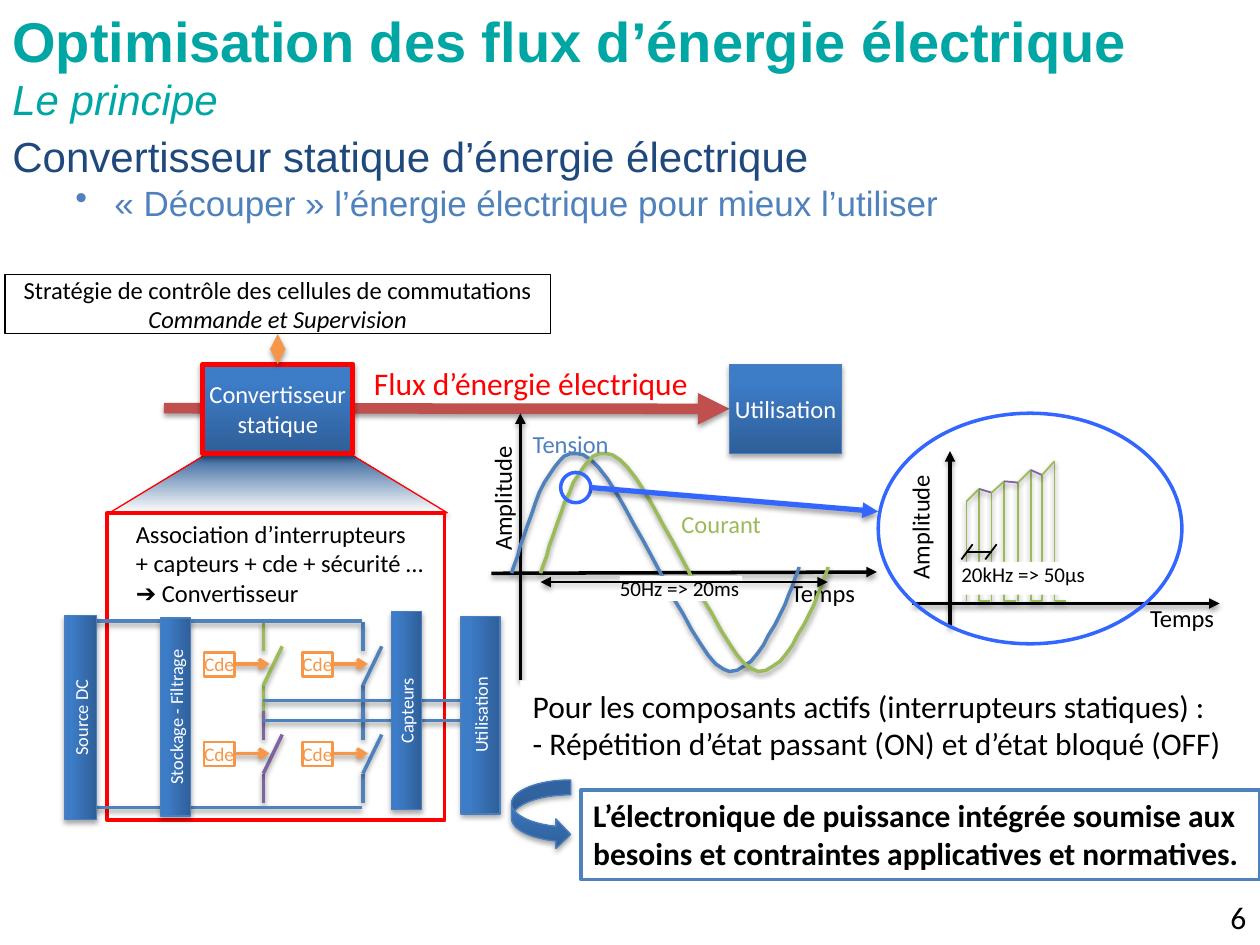
import pptx
import pptx.dml.color
import pptx.enum.shapes
import pptx.enum.text
import pptx.oxml
import pptx.oxml.ns
import pptx.util

RGB = pptx.dml.color.RGBColor
KIND = pptx.enum.shapes.MSO_SHAPE
ALIGN = pptx.enum.text.PP_ALIGN
ANCHOR = pptx.enum.text.MSO_ANCHOR

PX = 9144  # one px is a hundredth of an inch
BLACK = RGB(0x00, 0x00, 0x00)
WHITE = RGB(0xFF, 0xFF, 0xFF)
RED = RGB(0xFF, 0x00, 0x00)
BRICK = RGB(0xC0, 0x50, 0x4D)
TEAL = RGB(0x00, 0xA6, 0xA4)
NAVY = RGB(0x1F, 0x49, 0x7D)
BLUE = RGB(0x4F, 0x81, 0xBD)
EDGE = RGB(0x4B, 0x7E, 0xBC)
VIVID = RGB(0x33, 0x66, 0xFF)
GREEN = RGB(0x9B, 0xBB, 0x59)
PURPLE = RGB(0x80, 0x64, 0xA2)
ORANGE = RGB(0xF7, 0x96, 0x46)
DEEP = RGB(0x2F, 0x5F, 0x99)
LIGHT = RGB(0x3D, 0x7C, 0xC7)
STEEL = ((0, DEEP), (0.8, LIGHT))
FADE = ((0, WHITE), (1, DEEP))


def node(tag, **attrs):
    item = pptx.oxml.parse_xml(f"<a:{tag} {pptx.oxml.ns.nsdecls('a')}/>")
    for key, val in attrs.items():
        item.set(key, str(val))
    return item


def shade(item, alpha):
    """Give a shape or connector a soft shadow straight below it."""
    glow = node("outerShdw", blurRad=39400, dist=22000, dir=5400000, rotWithShape=0)
    color = node("srgbClr", val="000000")
    color.append(node("alpha", val=alpha * 1000))
    glow.append(color)
    effects = node("effectLst")
    effects.append(glow)
    item._element.spPr.append(effects)


def curve(start, *parts):
    """Sample a chain of cubic Bezier curves."""
    pts, steps = [start], 16
    for b, c, d in parts:
        a = pts[-1]
        for i in range(1, steps + 1):
            t = i / steps
            s = 1 - t
            pts.append(tuple(s**3 * p + 3 * s * s * t * q + 3 * s * t * t * r + t**3 * u
                             for p, q, r, u in zip(a, b, c, d)))
    return pts


class Board:
    def __init__(self, deck, font):
        self.font = font
        self.slide = deck.slides.add_slide(deck.slide_layouts[6])
        self.shapes = self.slide.shapes

    def put(self, shape, words, size, color=BLACK, align=ALIGN.LEFT,
            anchor=ANCHOR.TOP, pad=(10, 5), wrap=True):
        """Set the text of a shape and return its frame."""
        frame = shape.text_frame
        frame.text = words
        frame.word_wrap = wrap
        frame.vertical_anchor = anchor
        frame.margin_left = frame.margin_right = pad[0] * PX
        frame.margin_top = frame.margin_bottom = pad[1] * PX
        for para in frame.paragraphs:
            para.alignment = align
            for run in para.runs:
                run.font.name = self.font
                run.font.size = pptx.util.Pt(size)
                run.font.color.rgb = color
        return frame

    def label(self, x, y, w, h, words, size, color=BLACK, turn=0, **style):
        box = self.shapes.add_textbox(x * PX, y * PX, w * PX, h * PX)
        box.rotation = turn
        return self.put(box, words, size, color, **style)

    def shape(self, x, y, w, h, kind=KIND.RECTANGLE, fill=None, line=None, wide=0.75, turn=0):
        """Draw a preset shape; a tuple as fill means gradient stops."""
        item = self.shapes.add_shape(kind, x * PX, y * PX, w * PX, h * PX)
        item.rotation = turn
        if isinstance(fill, tuple) and not isinstance(fill, RGB):
            item.fill.gradient()
            item.fill.gradient_angle = 90
            for stop, (place, color) in zip(item.fill.gradient_stops, fill):
                stop.position = place
                stop.color.rgb = color
        elif fill is not None:
            item.fill.solid()
            item.fill.fore_color.rgb = fill
        else:
            item.fill.background()
        if line is not None:
            item.line.color.rgb = line
            item.line.width = pptx.util.Pt(wide)
        else:
            item.line.fill.background()
        if fill in (STEEL, FADE):
            shade(item, 35)
        else:
            item.shadow.inherit = False
        return item

    def block(self, x, y, w, h, words, size=14, line=EDGE, wide=0.75, turn=0, pad=(4, 5)):
        item = self.shape(x, y, w, h, fill=STEEL, line=line, wide=wide, turn=turn)
        self.put(item, words, size, WHITE, ALIGN.CENTER, ANCHOR.MIDDLE, pad)
        return item

    def line(self, x1, y1, x2, y2, color, wide=2, head=None, tail=None):
        item = self.shapes.add_connector(pptx.enum.shapes.MSO_CONNECTOR.STRAIGHT,
                                         x1 * PX, y1 * PX, x2 * PX, y2 * PX)
        item.line.color.rgb = color
        item.line.width = pptx.util.Pt(wide)
        for tag, end in (("headEnd", head), ("tailEnd", tail)):
            if end:
                item.line._get_or_add_ln().append(node(tag, type=end))
        shade(item, 38)
        return item

    def trace(self, pts, color, wide=2):
        pen = self.shapes.build_freeform(*pts[0], scale=PX)
        pen.add_line_segments(pts[1:], close=False)
        item = pen.convert_to_shape()
        item.fill.background()
        item.line.color.rgb = color
        item.line.width = pptx.util.Pt(wide)
        shade(item, 38)

    def switch(self, x, y, color):
        self.line(x, y, x, y + 23, color)
        self.line(x, y + 50, x, y + 73, color)
        self.line(x + 15, y + 19, x, y + 50, color)

    def order(self, x, y):
        """Draw a switch command box with its arrow."""
        self.line(x + 13, y + 9, x + 52, y + 9, ORANGE, tail="arrow")
        box = self.shape(x, y, 24, 19, fill=WHITE, line=ORANGE, wide=1.5)
        self.put(box, "Cde", 11, ORANGE, pad=(0, 0), wrap=False)


def heading(board):
    board.font = "Arial"
    title = board.label(0, 0, 1000, 79, "Optimisation des flux d’énergie électrique\vLe principe",
                        32, TEAL)
    main, sub = title.paragraphs[0].runs
    main.font.bold = True
    sub.font.italic = True
    sub.font.size = pptx.util.Pt(24)
    body = board.label(0, 99, 1000, 118, "Convertisseur statique d’énergie électrique\n"
                       "« Découper » l’énergie électrique pour mieux l’utiliser", 24, NAVY)
    point = body.paragraphs[1]
    point.level = 1
    props = point._p.get_or_add_pPr()
    props.set("marL", str(81 * PX))
    props.set("indent", str(-31 * PX))
    props.append(node("buChar", char="•"))
    font = point.runs[0].font
    font.size, font.color.rgb = pptx.util.Pt(20), BLUE
    board.font = "Calibri"


def chain(board):
    cone = board.shape(87, 360, 268, 47, KIND.TRAPEZOID, FADE, RED)
    cone.adjustments[0] = 1.65
    flux = board.line(130, 324, 579, 324, BRICK, 6, tail="triangle")
    conv = board.block(161, 289, 119, 71, "Convertisseur\nstatique", line=RED, wide=3, pad=(4, 12))
    load = board.block(579, 289, 89, 71, "Utilisation", pad=(4, 12))
    flux.end_connect(load, 1)
    board.label(287, 284, 274, 40, "Flux d’énergie électrique", 18, RED, wrap=False)
    plan = board.shape(4, 218, 433, 47, line=BLACK)
    text = board.put(plan, "Stratégie de contrôle des cellules de commutations\n"
                     "Commande et Supervision", 14, align=ALIGN.CENTER,
                     anchor=ANCHOR.MIDDLE, pad=(0, 0))
    text.paragraphs[1].runs[0].font.italic = True
    link = board.line(221, 289, 221, 265, ORANGE, 3, "triangle", "triangle")
    link.begin_connect(conv, 0)
    link.end_connect(plan, 2)


def waves(board):
    board.line(413, 540, 413, 328, BLACK, tail="triangle")
    board.line(390, 455, 696, 454, BLACK, tail="triangle")
    board.label(618, 454, 73, 34, "Temps", 14, wrap=False)
    board.label(347, 378, 104, 34, "Amplitude", 14, turn=270, wrap=False)
    wave = curve((406, 455), ((418, 423), (435, 348), (463, 361)),
                 ((492, 373), (546, 516), (574, 531)), ((603, 546), (634, 450), (634, 450)))
    for shift, color in ((0, BLUE), (23, GREEN)):
        board.trace([(x + shift, y) for x, y in wave], color)
    board.label(413, 336, 83, 34, "Tension", 14, BLUE, wrap=False)
    board.label(531, 399, 84, 34, "Courant", 14, GREEN, wrap=False)
    board.shape(445, 375, 24, 24, KIND.OVAL, line=VIVID, wide=2)
    board.line(697, 406, 469, 387, VIVID, 3, head="triangle")
    span = board.shape(492, 457, 97, 20, fill=WHITE)
    board.put(span, "50Hz => 20ms", 12, pad=(0, 0), wrap=False)
    board.line(429, 462, 657, 462, BLACK, 1, "triangle", "triangle")


def zoom(board):
    board.line(754, 498, 754, 358, BLACK, tail="triangle")
    board.line(724, 479, 968, 479, BLACK, tail="triangle")
    board.label(903, 474, 77, 34, "Temps", 14)
    board.label(669, 382, 132, 43, "Amplitude", 14, turn=270, wrap=False)
    board.shape(697, 328, 241, 183, KIND.OVAL, line=VIVID, wide=2)
    teeth = [(767, 398), (777, 388), (787, 391), (797, 382),
             (808, 383), (818, 373), (827, 377), (837, 366)]
    for x, y in teeth:
        board.line(x, y, x, 477, GREEN, 1)
    for i, (left, right) in enumerate(zip(teeth, teeth[1:])):
        board.line(*left, *right, PURPLE if i % 2 else GREEN, 1)
    for x, _ in teeth[1::2]:
        board.line(x, 477, x + 9, 477, GREEN, 1)
    board.line(767, 438, 787, 438, BLACK, 1)
    for x in (763, 782):
        board.line(x, 444, x + 9, 432, BLACK, 1)
    span = board.shape(763, 446, 127, 26, fill=WHITE)
    board.put(span, "20kHz => 50µs", 12, pad=(0, 0), wrap=False)


def circuit(board):
    board.shape(85, 407, 268, 244, fill=WHITE, line=RED, wide=2)
    board.label(98, 407, 254, 81, "Association d’interrupteurs\n+ capteurs + cde + sécurité …\n"
                "➔ Convertisseur", 14, wrap=False)
    for x, y, color in ((209, 494, GREEN), (288, 494, BLUE), (209, 564, PURPLE), (288, 564, BLUE)):
        board.switch(x, y, color)
    for x1, y, x2 in ((59, 493, 287), (67, 641, 287), (209, 556, 366), (209, 572, 374)):
        board.line(x1, y, x2, y, BLUE)
    for x in (162, 240):
        for y in (518, 589):
            board.order(x, y)
    for x, y, w, h, words in ((61, 557, 157, 24, "Stockage - Filtrage"),
                              (-17, 557, 162, 25, "Source DC"),
                              (303, 552, 157, 31, "Utilisation"),
                              (244, 552, 157, 24, "Capteurs")):
        board.block(x, y, w, h, words, 10.5, turn=270, pad=(0, 0))


def summary(board):
    note = board.shape(413, 540, 587, 71, fill=WHITE)
    board.put(note, "Pour les composants actifs (interrupteurs statiques) :\v"
              "- Répétition d’état passant (ON) et d’état bloqué (OFF)", 18)
    board.shape(406, 619, 47, 55, KIND.CURVED_RIGHT_ARROW, STEEL, EDGE)
    box = board.shape(461, 627, 539, 71, fill=WHITE, line=BLUE, wide=2)
    text = board.put(box, "L’électronique de puissance intégrée soumise aux besoins et "
                     "contraintes applicatives et normatives.", 18)
    text.paragraphs[0].runs[0].font.bold = True
    board.label(928, 708, 71, 40, "6", 18, align=ALIGN.RIGHT)


def main():
    deck = pptx.Presentation()
    deck.slide_width, deck.slide_height = 1000 * PX, 750 * PX
    board = Board(deck, "Calibri")
    for part in (heading, chain, waves, zoom, circuit, summary):
        part(board)
    deck.save("out.pptx")


if __name__ == "__main__":
    main()
